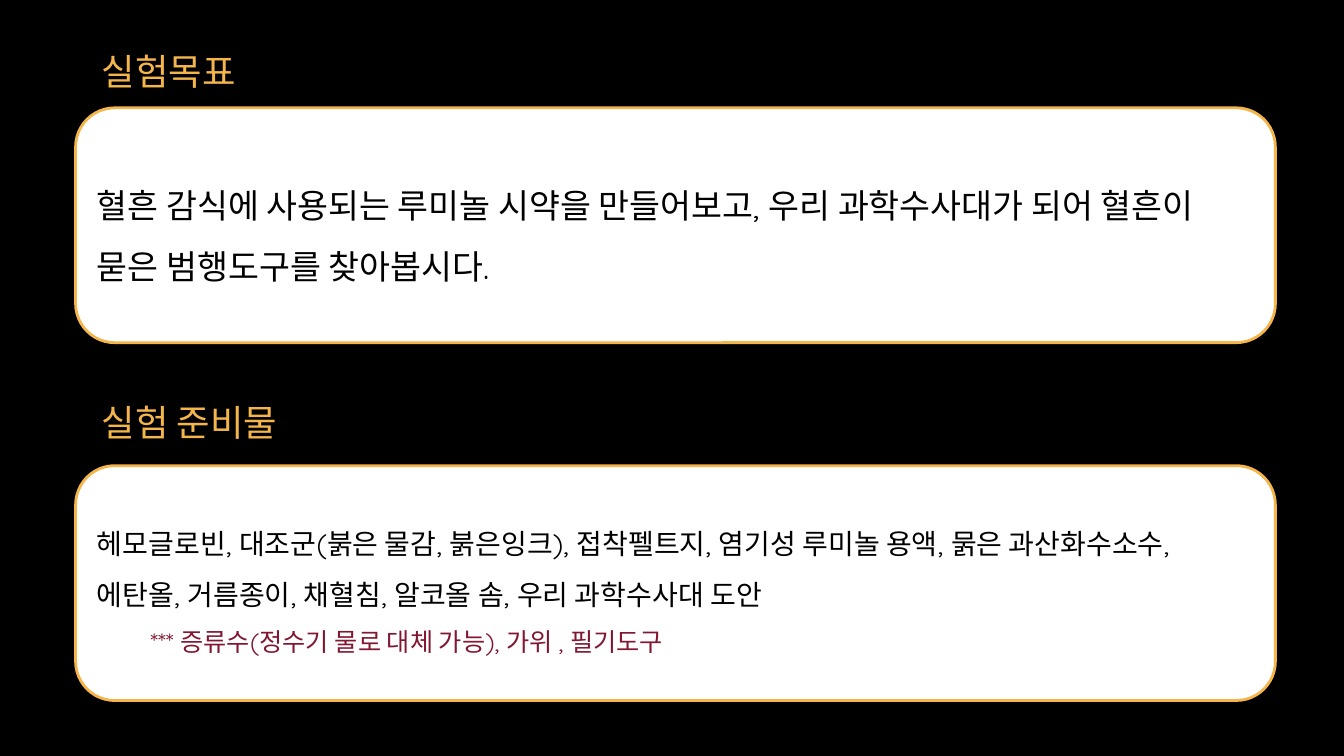
from pptx import Presentation
from pptx.dml.color import RGBColor
from pptx.enum.shapes import MSO_SHAPE
from pptx.enum.text import MSO_ANCHOR, PP_ALIGN
from pptx.util import Inches, Pt

FONT = "Quicksand"
GOLD, WHITE, BLACK, WINE = "F4B54B", "FFFFFF", "000000", "811731"
LEFT, WIDTH, HEIGHT = 0.75, 11.9, 2.33
HEAD_LEFT, HEAD_HEIGHT = 0.91, 0.48

PARTS = [
    {"head": "실험목표", "head_top": 0.39, "head_width": 1.96, "top": 1.07,
     "lines": [("혈흔 감식에 사용되는 루미놀 시약을 만들어보고, 우리 과학수사대가 되어 "
                "혈흔이 묻은 범행도구를 찾아봅시다.", 24, BLACK, 0)]},
    {"head": "실험 준비물", "head_top": 3.87, "head_width": 2.3, "top": 4.62,
     "lines": [("헤모글로빈, 대조군(붉은 물감, 붉은잉크), 접착펠트지, 염기성 루미놀 용액, "
                "묽은 과산화수소수, 에탄올, 거름종이, 채혈침, 알코올 솜, 우리 과학수사대 도안",
                20, BLACK, 0),
               ("*** 증류수(정수기 물로 대체 가능), 가위 , 필기도구", 18, WINE, 0.53)]},
]


def paint(color, code):
    color.rgb = RGBColor.from_string(code)


def write(par, text, size, code):
    par.text = text
    par.alignment = PP_ALIGN.LEFT
    par.font.name = FONT
    par.font.size = Pt(size)
    paint(par.font.color, code)


def add_head(slide, part):
    box = slide.shapes.add_textbox(
        Inches(HEAD_LEFT), Inches(part["head_top"]),
        Inches(part["head_width"]), Inches(HEAD_HEIGHT))
    frame = box.text_frame
    frame.word_wrap = True
    frame.margin_left = frame.margin_right = Inches(0.1)
    frame.margin_top = frame.margin_bottom = Inches(0.1)
    write(frame.paragraphs[0], part["head"], 26, GOLD)


def add_panel(slide, part):
    panel = slide.shapes.add_shape(
        MSO_SHAPE.ROUNDED_RECTANGLE, Inches(LEFT), Inches(part["top"]),
        Inches(WIDTH), Inches(HEIGHT))
    panel.shadow.inherit = False
    panel.fill.solid()
    paint(panel.fill.fore_color, WHITE)
    paint(panel.line.color, GOLD)
    panel.line.width = Pt(2)
    frame = panel.text_frame
    frame.word_wrap = True
    frame.vertical_anchor = MSO_ANCHOR.MIDDLE
    for index, (text, size, code, indent) in enumerate(part["lines"]):
        par = frame.add_paragraph() if index else frame.paragraphs[0]
        write(par, text, size, code)
        par.line_spacing = 1.5
        if indent:
            par._p.get_or_add_pPr().set("marL", str(Inches(indent)))


def main():
    deck = Presentation()
    deck.slide_width, deck.slide_height = Inches(13.33), Inches(7.5)
    slide = deck.slides.add_slide(deck.slide_layouts[6])
    slide.background.fill.solid()
    paint(slide.background.fill.fore_color, BLACK)
    for part in PARTS:
        add_head(slide, part)
        add_panel(slide, part)
    deck.save("out.pptx")


if __name__ == "__main__":
    main()
